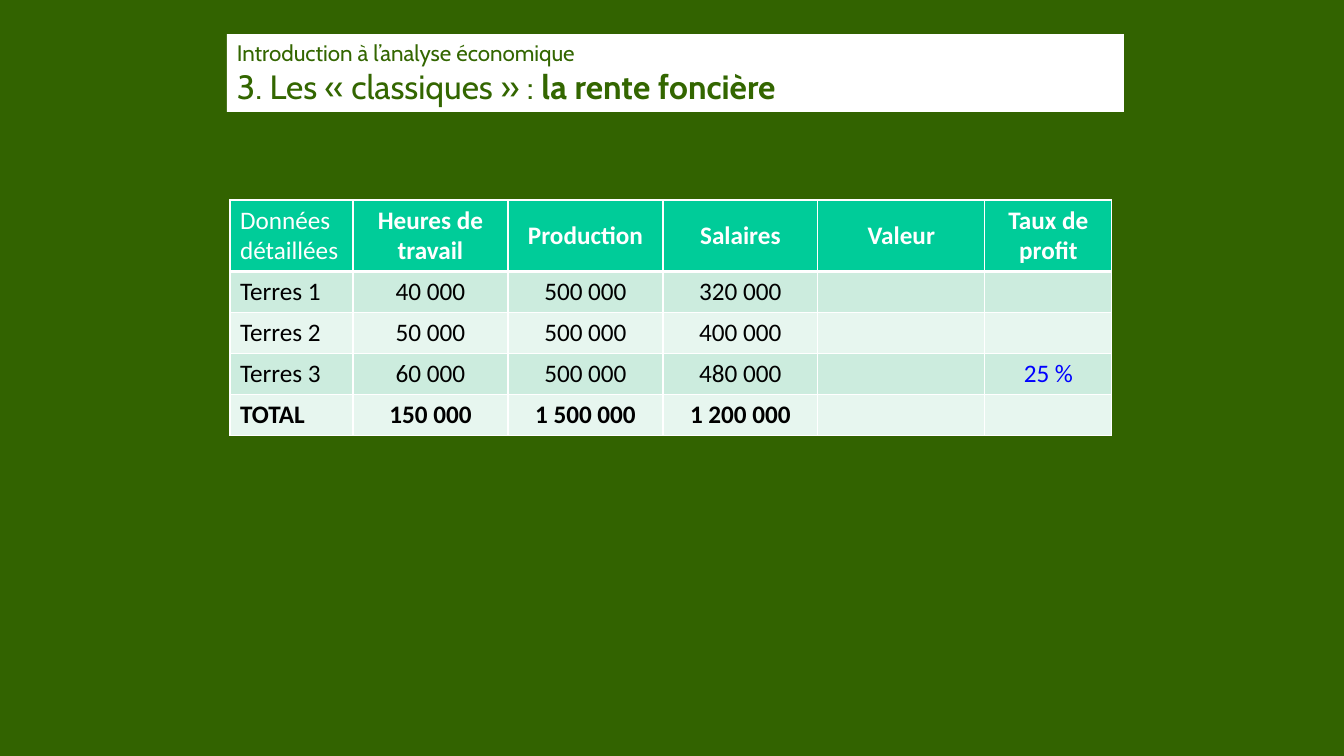
from pptx import Presentation
from pptx.dml.color import RGBColor
from pptx.enum.shapes import MSO_SHAPE as Shape
from pptx.enum.text import MSO_ANCHOR as Anchor, PP_ALIGN as Align
from pptx.oxml import parse_xml
from pptx.oxml.ns import nsdecls
from pptx.util import Pt

PX = 9071.43


def px(*vals):
    return [round(val * PX) for val in vals]


def paint(obj, tone):
    if hasattr(obj, "solid"):
        obj.solid()
        obj = obj.fore_color
    else:
        obj = obj.color
    obj.rgb = RGBColor.from_string(tone)


deck = Presentation()
deck.slide_width, deck.slide_height = px(1344, 756)
slide = deck.slides.add_slide(deck.slide_layouts[6])
paint(slide.background.fill, "326300")

title = slide.shapes.add_shape(Shape.RECTANGLE, *px(227, 34, 897, 78))
title.shadow.inherit = False
title.line.fill.background()
paint(title.fill, "FFFFFF")
frame = title.text_frame
frame.word_wrap = True
frame.vertical_anchor = Anchor.TOP
lines = [
    [("Introduction à l’analyse économique", 16, False)],
    [("3. Les « classiques » : ", 24, False), ("la rente foncière", 24, True)],
]
for at, line in enumerate(lines):
    para = frame.add_paragraph() if at else frame.paragraphs[0]
    para.alignment = Align.LEFT
    for text, size, bold in line:
        run = para.add_run()
        run.text = text
        style = {"name": "Cabin", "size": Pt(size), "bold": bold}
        for key, val in style.items():
            setattr(run.font, key, val)
        paint(run.font, "336600")

data = [
    ["Données\ndétaillées", "Heures de travail", "Production", "Salaires", "Valeur", "Taux de profit"],
    ["Terres 1", "40 000", "500 000", "320 000", "", ""],
    ["Terres 2", "50 000", "500 000", "400 000", "", ""],
    ["Terres 3", "60 000", "500 000", "480 000", "", "25 %"],
    ["TOTAL", "150 000", "1 500 000", "1 200 000", "", ""],
]
wides = px(123, 155, 155, 155, 167, 127)
highs = px(70, 41, 41, 41, 41)
fills = ["00CC99", "CCECDE", "E7F6EF", "CCECDE", "E7F6EF"]
last = len(data) - 1
grid = slide.shapes.add_table(
    len(highs), len(wides), *px(230, 200), sum(wides), sum(highs)
).table
grid.first_row = grid.horz_banding = False
for col, wide in zip(grid.columns, wides):
    col.width = wide
for row, high in zip(grid.rows, highs):
    row.height = high

for r, row in enumerate(data):
    for c, text in enumerate(row):
        cell = grid.cell(r, c)
        edges = {"L": 1, "R": 1, "T": 3 if r == 1 else 1, "B": 1 if r else 3}
        props = cell._tc.get_or_add_tcPr()
        for side, wide in edges.items():
            props.append(parse_xml(
                f'<a:ln{side} {nsdecls("a")} w="{Pt(wide)}"><a:solidFill>'
                f'<a:srgbClr val="FFFFFF"/></a:solidFill></a:ln{side}>'
            ))
        paint(cell.fill, fills[r])
        cell.vertical_anchor = Anchor.MIDDLE if r == 0 and c else Anchor.TOP
        cell.text = text
        tone = "FFFFFF" if r == 0 else "0000FF" if text == "25 %" else "000000"
        bold = r == last or (r == 0 and c > 0)
        style = {"name": "Calibri", "size": Pt(18), "bold": bold}
        for para in cell.text_frame.paragraphs:
            para.alignment = Align.CENTER if c else Align.LEFT
            for key, val in style.items():
                setattr(para.font, key, val)
            for run in para.runs:
                for key, val in style.items():
                    setattr(run.font, key, val)
                paint(run.font, tone)

deck.save("out.pptx")
